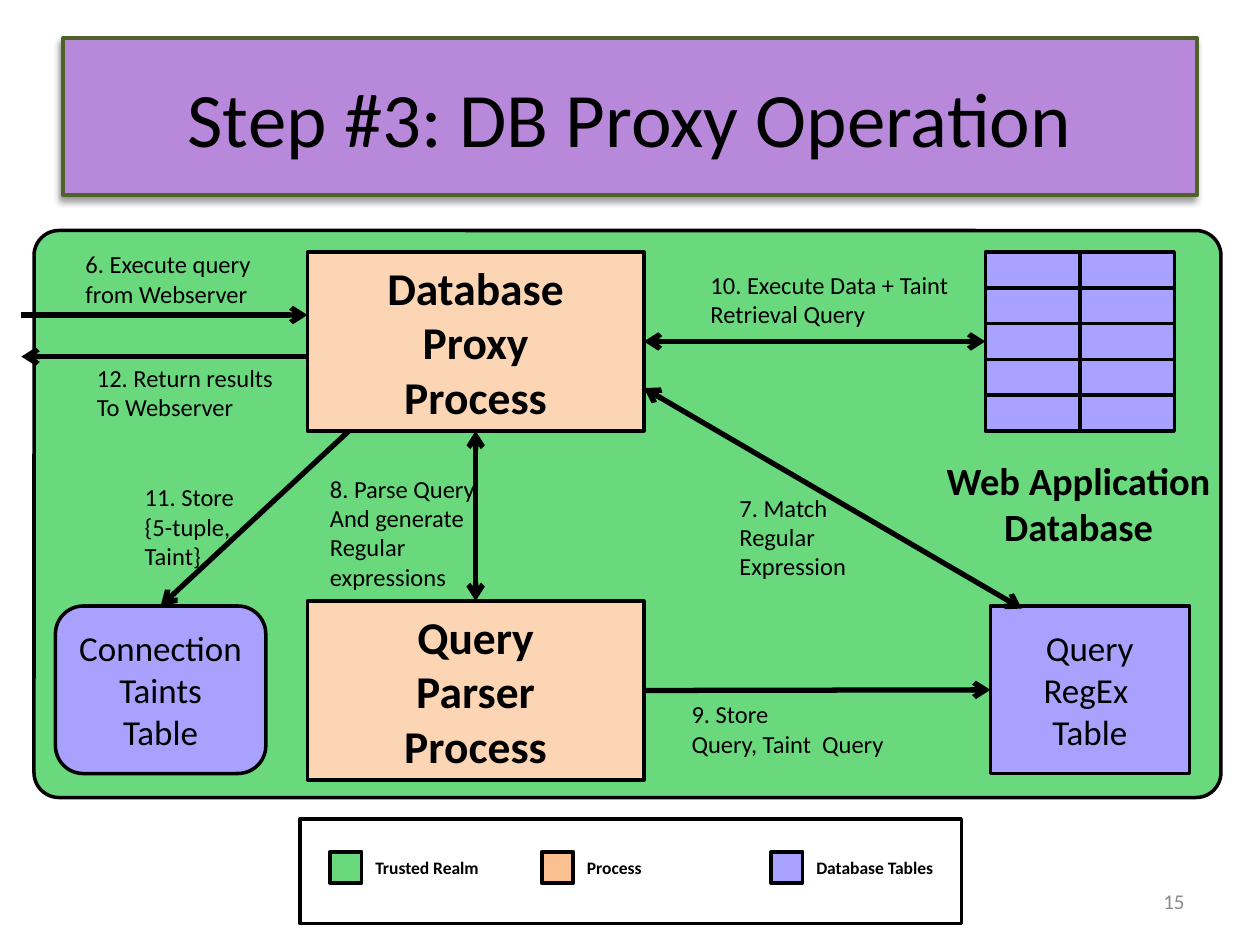
from dataclasses import dataclass

from lxml import etree
from pptx import Presentation
from pptx.dml.color import RGBColor
from pptx.enum.shapes import MSO_CONNECTOR as CONN, MSO_SHAPE as SHAPE
from pptx.enum.text import MSO_ANCHOR as ANCHOR, PP_ALIGN as ALIGN
from pptx.oxml.ns import qn
from pptx.util import Inches, Pt

TOP, LEFT, BOTTOM, RIGHT = range(4)


@dataclass(frozen=True)
class Theme:
    font: str = "Calibri"
    ink: str = "000000"
    muted: str = "8C8C8C"
    title_fill: str = "B889DB"
    title_line: str = "4F6228"
    trusted: str = "6AD87C"
    process: str = "FCD5B5"
    process_key: str = "FAC090"
    table: str = "A8A1FD"
    title_size: int = 44
    process_size: int = 26
    heading_size: int = 22
    table_size: int = 20
    label_size: int = 14
    number_size: int = 12
    key_size: int = 10
    outline: int = 2
    arrow: int = 3


class Diagram:
    def __init__(self, slide, theme):
        self.shapes = slide.shapes
        self.theme = theme

    def set_text(self, tf, text, size, bold, align, color=None):
        for i, line in enumerate(text.split("\n")):
            p = tf.paragraphs[0] if i == 0 else tf.add_paragraph()
            p.text = line
            p.alignment = align
            p.font.name = self.theme.font
            p.font.size = Pt(size)
            p.font.bold = bold
            p.font.color.rgb = RGBColor.from_string(color or self.theme.ink)

    def box(self, x, y, w, h, fill=None, text="", size=20, bold=False,
            kind=SHAPE.RECTANGLE, line=None, parent=None):
        sp = (parent or self).shapes.add_shape(
            kind, Inches(x), Inches(y), Inches(w), Inches(h))
        sp.shadow.inherit = False
        if fill:
            sp.fill.solid()
            sp.fill.fore_color.rgb = RGBColor.from_string(fill)
        else:
            sp.fill.background()
        sp.line.color.rgb = RGBColor.from_string(line or self.theme.ink)
        sp.line.width = Pt(self.theme.outline)
        if text:
            sp.text_frame.word_wrap = True
            sp.text_frame.vertical_anchor = ANCHOR.MIDDLE
            self.set_text(sp.text_frame, text, size, bold, ALIGN.CENTER)
        return sp

    def label(self, x, y, w, h, text, size=None, bold=False, align=ALIGN.LEFT,
              wrap=False, color=None, anchor=ANCHOR.TOP, parent=None):
        sp = (parent or self).shapes.add_textbox(
            Inches(x), Inches(y), Inches(w), Inches(h))
        tf = sp.text_frame
        tf.word_wrap = wrap
        tf.vertical_anchor = anchor
        self.set_text(tf, text, size or self.theme.label_size, bold, align, color)

    def arrow(self, start, end, both=False, begin_at=None, end_at=None):
        c = self.shapes.add_connector(
            CONN.STRAIGHT, *(Inches(v) for v in start + end))
        if begin_at:
            c.begin_connect(*begin_at)
        if end_at:
            c.end_connect(*end_at)
        c.line.color.rgb = RGBColor.from_string(self.theme.ink)
        c.line.width = Pt(self.theme.arrow)
        ln = c._element.spPr.find(qn("a:ln"))
        for tag in ("a:headEnd", "a:tailEnd") if both else ("a:tailEnd",):
            etree.SubElement(ln, qn(tag), type="arrow")
        etree.SubElement(c._element.spPr, qn("a:effectLst"))

    def drop_shadow(self, sp):
        effects = sp._element.spPr.find(qn("a:effectLst"))
        shadow = etree.SubElement(
            effects, qn("a:outerShdw"), blurRad=str(Pt(4)), dist=str(Pt(3)),
            dir=str(135 * 60000), algn="ctr", rotWithShape="0")
        clr = etree.SubElement(shadow, qn("a:srgbClr"), val=self.theme.ink)
        etree.SubElement(clr, qn("a:alpha"), val="40000")

    def grid(self, x, y, w, h, rows, cols):
        group = self.shapes.add_group_shape()
        cw, ch = w / cols, h / rows
        return [[self.box(x + c * cw, y + r * ch, cw, ch, self.theme.table, parent=group)
                 for c in range(cols)] for r in range(rows)]

    def legend(self, x, y, w, h, entries):
        group = self.shapes.add_group_shape()
        for key_x, width, fill, text in entries:
            self.box(key_x, y + 0.26, 0.25, 0.25, fill, parent=group)
            self.label(key_x + 0.26, y + 0.25, width, 0.27, text,
                       self.theme.key_size, True, parent=group)
        self.box(x, y, w, h, parent=group)


def main():
    prs = Presentation()
    prs.slide_width, prs.slide_height = Inches(10), Inches(7.5)
    t = Theme()
    d = Diagram(prs.slides.add_slide(prs.slide_layouts[6]), t)

    # Title
    title = d.box(0.5, 0.3, 9, 1.25, t.title_fill, "Step #3: DB Proxy Operation",
                  t.title_size, line=t.title_line)
    d.drop_shadow(title)

    # Trusted realm
    realm = d.box(0.27, 1.83, 9.42, 4.5, t.trusted, kind=SHAPE.ROUNDED_RECTANGLE)
    realm.adjustments[0] = 0.044

    # Processes
    proxy, parser = (
        d.box(2.44, y, 2.67, 1.42, t.process, text, t.process_size, True)
        for y, text in ((2, "Database\nProxy\nProcess"), (4.77, "Query\nParser\nProcess")))

    # Database tables
    regex = d.box(7.86, 4.81, 1.58, 1.33, t.table, "Query\nRegEx \nTable", t.table_size)
    cells = d.grid(7.82, 2, 1.5, 1.42, rows=5, cols=2)
    d.label(7.4, 3.58, 2.32, 0.84, "Web Application\nDatabase",
            t.heading_size, True, ALIGN.CENTER)
    taints = d.box(0.44, 4.81, 1.67, 1.33, t.table, "Connection\nTaints\nTable",
                   t.table_size, kind=SHAPE.ROUNDED_RECTANGLE)

    # Flows between the parts
    d.arrow((0.17, 2.5), (2.44, 2.5))
    d.arrow((3.77, 3.42), (3.78, 4.77), True, (proxy, BOTTOM), (parser, TOP))
    d.arrow((8.11, 4.83), (5.11, 3.08), True)
    d.arrow((5.11, 5.48), (7.86, 5.48), False, (parser, RIGHT), (regex, LEFT))
    d.arrow((7.82, 2.71), (5.11, 2.71), True, (cells[2][0], LEFT), (proxy, RIGHT))
    d.arrow((2.77, 3.42), (1.27, 4.81), end_at=(taints, TOP))
    d.arrow((2.44, 2.83), (0.17, 2.83))

    # Step labels
    for x, y, w, h, text, wrap in (
        (0.58, 1.93, 1.83, 0.57, "6. Execute query from Webserver", True),
        (5.77, 3.86, 1.06, 0.81, "7. Match\nRegular\nExpression", False),
        (2.52, 3.71, 1.36, 1.04, "8. Parse Query\nAnd generate\nRegular\nexpressions", False),
        (5.39, 5.5, 1.97, 0.57, "9. Store\nQuery, Taint  Query", True),
        (5.54, 2.09, 2.09, 0.57, "10. Execute Data + Taint\nRetrieval Query", False),
        (1.05, 3.78, 0.98, 0.81, "11. Store\n{5-tuple,\nTaint}", False),
        (0.67, 2.83, 1.69, 0.57, "12. Return results\nTo Webserver", True),
    ):
        d.label(x, y, w, h, text, wrap=wrap)

    # Legend
    d.legend(2.38, 6.5, 5.25, 0.83, (
        (2.62, 1.05, t.trusted, "Trusted Realm"),
        (4.3, 0.64, t.process_key, "Process"),
        (6.12, 1.15, t.table, "Database Tables"),
    ))

    # Slide number
    d.label(7.17, 6.95, 2.33, 0.4, "15", t.number_size, align=ALIGN.RIGHT,
            wrap=True, color=t.muted, anchor=ANCHOR.MIDDLE)

    prs.save("out.pptx")


if __name__ == "__main__":
    main()
